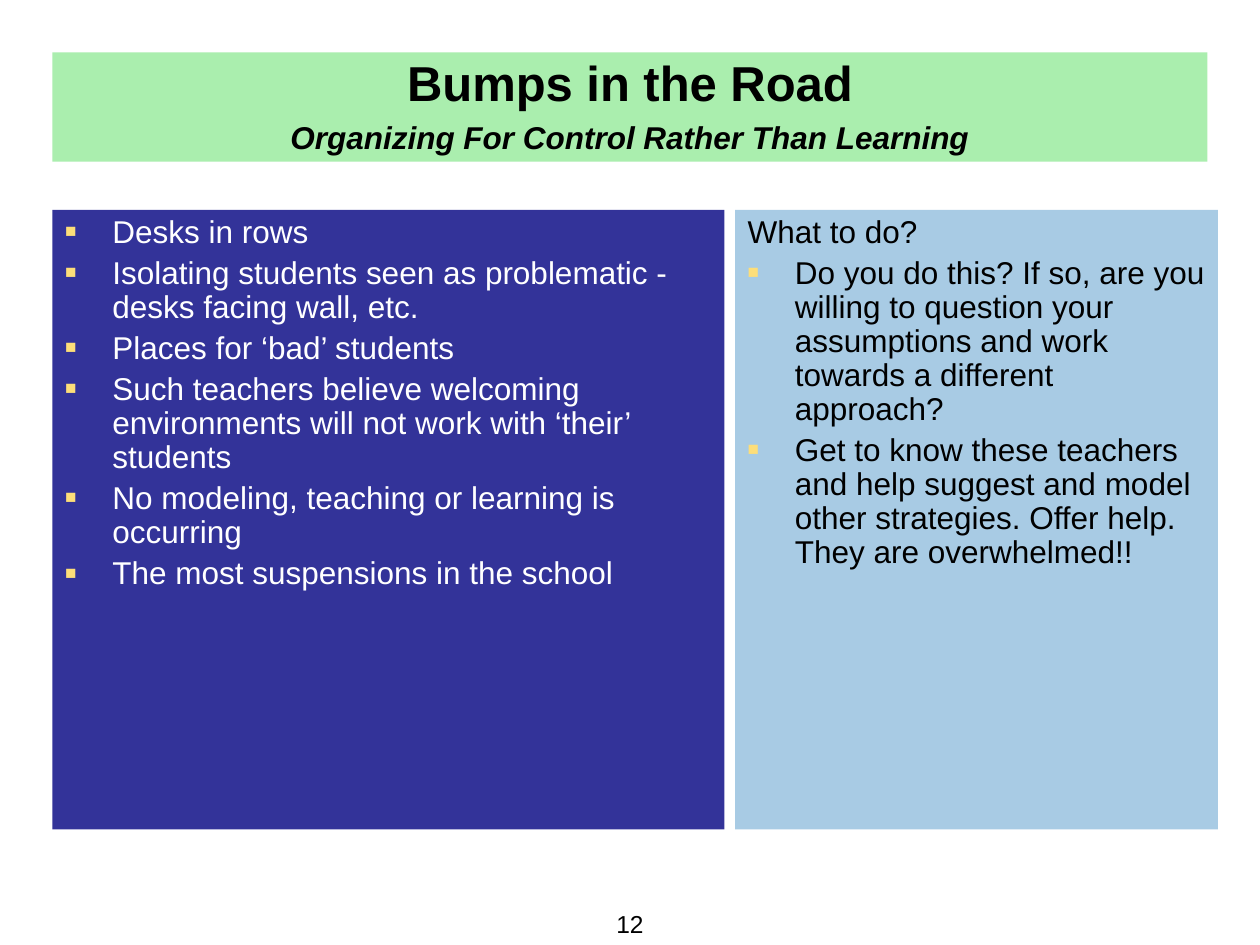
import lxml.etree
import pptx
import pptx.dml.color
import pptx.enum.shapes
import pptx.enum.text
import pptx.oxml.ns
import pptx.util

PX = 914400 // 120  # 120 px to the inch
INSET = 6
BLACK, WHITE = "000000", "FFFFFF"
GREEN, NAVY, SKY, YELLOW = "AAEEAE", "333399", "A8CBE4", "FDDE79"
CENTER = pptx.enum.text.PP_ALIGN.CENTER


def emu(*lengths):
    return [pptx.util.Emu(length * PX) for length in lengths]


def rgb(color):
    return pptx.dml.color.RGBColor.from_string(color)


class SlideBuilder:
    font_name = "Arial"
    line_spacing = 0.9
    indent = 45

    def __init__(self, slide):
        self.slide = slide

    def rectangle(self, shapes, box, color):
        shape = shapes.add_shape(pptx.enum.shapes.MSO_SHAPE.RECTANGLE, *emu(*box))
        shape.shadow.inherit = False
        shape.fill.solid()
        shape.fill.fore_color.rgb = rgb(color)
        shape.line.fill.background()
        return shape

    def frame(self, shape, anchor=pptx.enum.text.MSO_ANCHOR.TOP, wrap=True):
        frame = shape.text_frame
        frame.word_wrap = wrap
        frame.vertical_anchor = anchor
        inset, = emu(INSET)
        frame.margin_left = frame.margin_right = inset
        frame.margin_top = frame.margin_bottom = inset
        return frame

    def paragraph(self, frame, text, size, color, before=0, align=None, bullet=None):
        """Fill the empty first paragraph, or add one after it."""
        first = not frame.text
        paragraph = frame.paragraphs[0] if first else frame.add_paragraph()
        paragraph.text = text
        paragraph.alignment = align
        paragraph.line_spacing = self.line_spacing
        paragraph.space_before = pptx.util.Pt(0 if first else before)
        if bullet is not None:
            self.bullet(paragraph, bullet)
        font = paragraph.font
        font.name = self.font_name
        font.size = pptx.util.Pt(size)
        font.color.rgb = rgb(color)
        return paragraph

    def bullet(self, paragraph, visible):
        """Set a hanging indent, with a small square when visible."""
        properties = paragraph._p.get_or_add_pPr()
        hang, = emu(self.indent)
        properties.set("marL", str(hang))
        properties.set("indent", str(-hang))

        def add(parent, tag, **attributes):
            return lxml.etree.SubElement(parent, pptx.oxml.ns.qn(tag), **attributes)

        if visible:
            add(add(properties, "a:buClr"), "a:srgbClr", val=YELLOW)
            add(properties, "a:buSzPct", val="60000")
            add(properties, "a:buFont", typeface=self.font_name)
            add(properties, "a:buChar", char="■")
        else:
            add(properties, "a:buNone")

    def banner(self, box, title, subtitle):
        frame = self.frame(self.rectangle(self.slide.shapes, box, GREEN))
        heading = self.paragraph(frame, title, 28, BLACK, align=CENTER)
        heading.font.bold = True
        detail = self.paragraph(frame, subtitle, 18, BLACK, before=6, align=CENTER)
        detail.font.bold = detail.font.italic = True

    def panel(self, box, fill, color, text_height, items, heading=None):
        left, top, width, _ = box
        shapes = self.slide.shapes.add_group_shape().shapes
        self.rectangle(shapes, box, fill)
        text_box = shapes.add_textbox(
            *emu(left + INSET, top, width - 2 * INSET, text_height))
        frame = self.frame(text_box)
        if heading:
            self.paragraph(frame, heading, 18, color, bullet=False)
        for item in items:
            self.paragraph(frame, item, 18, color, before=4, bullet=True)

    def page_number(self, box, number):
        text_box = self.slide.shapes.add_textbox(*emu(*box))
        frame = self.frame(text_box, pptx.enum.text.MSO_ANCHOR.BOTTOM, wrap=False)
        paragraph = self.paragraph(frame, number, 14, BLACK, align=CENTER)
        paragraph.line_spacing = 1.0


def main():
    presentation = pptx.Presentation()
    presentation.slide_width, presentation.slide_height = emu(1200, 900)
    builder = SlideBuilder(
        presentation.slides.add_slide(presentation.slide_layouts[6]))

    builder.page_number((580, 859, 40, 41), "12")
    builder.banner((50, 50, 1100, 104), "Bumps in the Road",
                   "Organizing For Control Rather Than Learning")
    builder.panel((50, 200, 640, 590), NAVY, WHITE, 366, [
        "Desks in rows",
        "Isolating students seen as problematic - desks facing wall, etc.",
        "Places for ‘bad’ students",
        "Such teachers believe welcoming environments will not work with "
        "‘their’ students",
        "No modeling, teaching or learning is occurring",
        "The most suspensions in the school",
    ])
    builder.panel((700, 200, 460, 590), SKY, BLACK, 344, [
        "Do you do this? If so, are you willing to question your assumptions "
        "and work towards a different approach?",
        "Get to know these teachers and help suggest and model other "
        "strategies. Offer help. They are overwhelmed!!",
    ], heading="What to do?")
    presentation.save("out.pptx")


if __name__ == "__main__":
    main()
